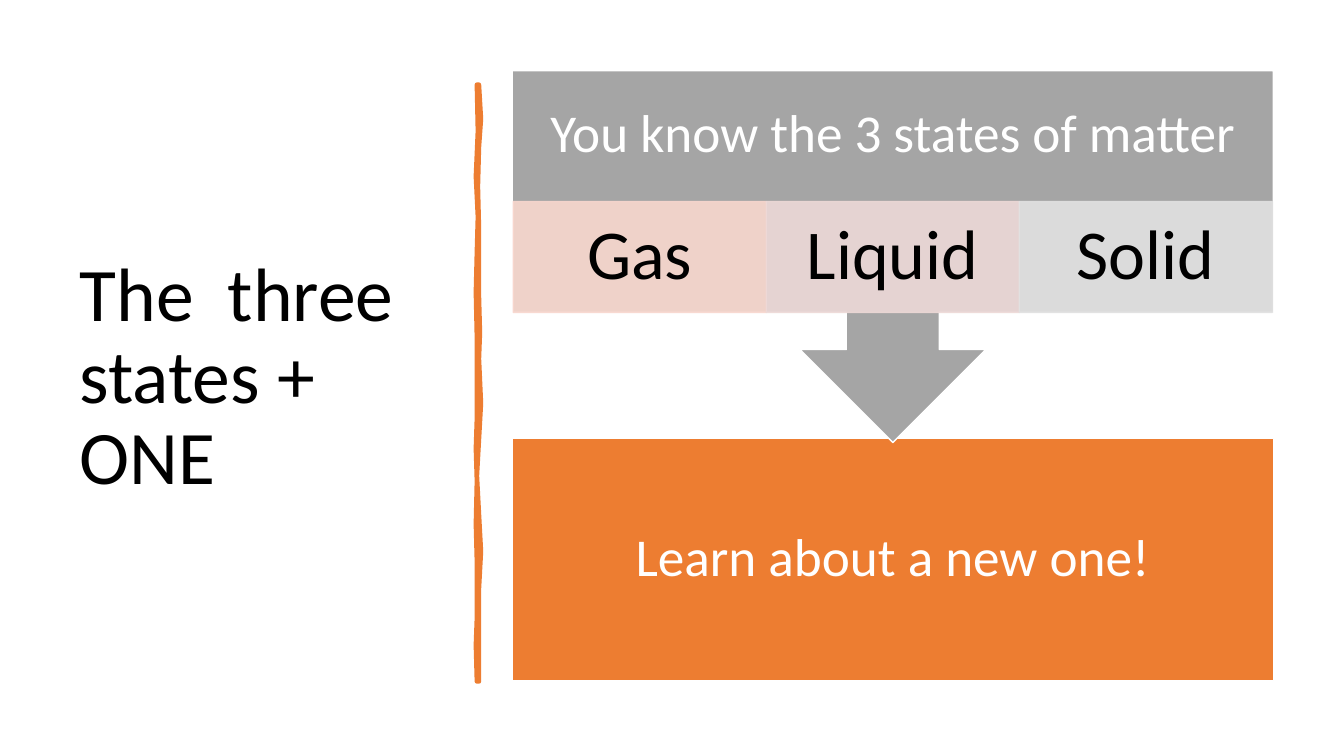
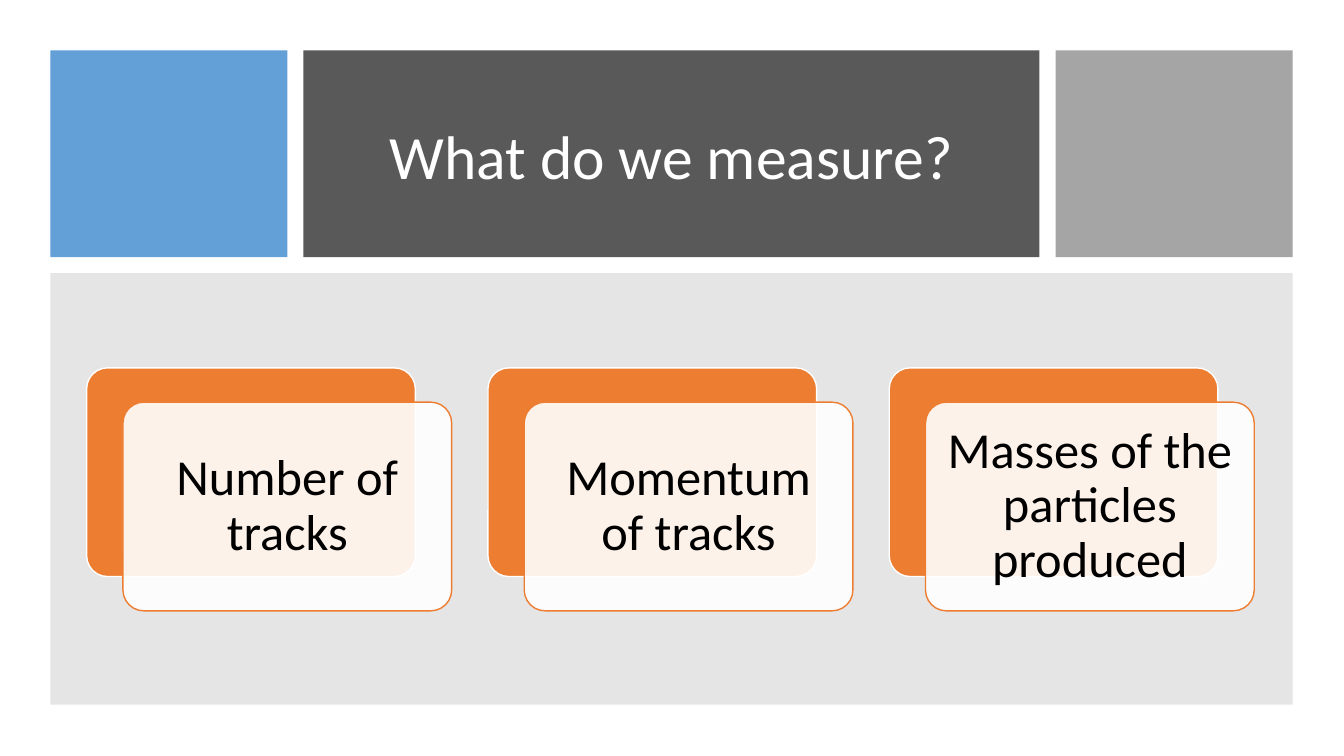
from lxml.etree import SubElement
from pptx import Presentation
from pptx.dml.color import RGBColor
from pptx.enum.shapes import MSO_SHAPE as Preset
from pptx.enum.text import MSO_ANCHOR as Anchor, MSO_AUTO_SIZE as AutoSize, PP_ALIGN as Align
from pptx.oxml.ns import qn
from pptx.util import Inches, Pt

ORANGE, GREY, CHARCOAL, BLUE = "ED7D31", "A5A5A5", "595959", "5B9BD5"
WHITE, BLACK, PANEL = "FFFFFF", "000000", "808080"


def rgb(value):
    """Turn a hex string into a colour."""
    return RGBColor.from_string(value)


def apply(target, values):
    """Set every attribute named in a dict of format values."""
    for name, value in values.items():
        setattr(target, name, value)


class Deck:
    """Hold the shared style, the presentation and the current slide."""

    font = "Calibri"
    line_spacing = 0.9

    def __init__(self):
        """Open a wide presentation."""
        self.deck = Presentation()
        apply(self.deck, {"slide_width": Inches(13.33), "slide_height": Inches(7.5)})
        self.page = None

    def new_page(self):
        """Start a slide that has only a title."""
        self.page = self.deck.slides.add_slide(self.deck.slide_layouts[5])

    def set_text(self, box, text, size, colour, align=Align.CENTER, insets=(0.1, 0.05)):
        """Put one styled paragraph in a shape."""
        frame = box.text_frame
        side, end = map(Inches, insets)
        apply(frame, {"word_wrap": True, "auto_size": AutoSize.NONE,
                      "vertical_anchor": Anchor.MIDDLE,
                      "margin_left": side, "margin_right": side,
                      "margin_top": end, "margin_bottom": end})
        para = frame.paragraphs[0]
        apply(para, {"alignment": align, "line_spacing": self.line_spacing})
        span = para.add_run()
        span.text = text
        apply(span.font, {"name": self.font, "size": Pt(size)})
        span.font.color.rgb = rgb(colour)

    def title(self, text, place, size, colour, align):
        """Move the title placeholder to its place, in front of the bands."""
        box = self.page.shapes.title
        apply(box, dict(zip(("left", "top", "width", "height"), map(Inches, place))))
        self.set_text(box, text, size, colour, align)
        self.page.shapes.element.append(box.element)

    def paint(self, shape, fill, line=None, width=1, alphas=()):
        """Fill and outline a shape, with opacities in percent for fill and line."""
        shape.shadow.inherit = False
        shape.fill.solid()
        shape.fill.fore_color.rgb = rgb(fill)
        if line:
            shape.line.color.rgb = rgb(line)
            shape.line.width = Pt(width)
        else:
            shape.line.fill.background()
        colours = shape.element.spPr.findall(".//" + qn("a:srgbClr"))
        for colour, percent in zip(colours, alphas):
            SubElement(colour, qn("a:alpha")).set("val", str(percent * 1000))

    def shape(self, preset, place, fill, line=None, alphas=(), radius=None):
        """Add a painted preset shape."""
        shape = self.page.shapes.add_shape(preset, *map(Inches, place))
        if radius:
            shape.adjustments[0] = radius
        self.paint(shape, fill, line, alphas=alphas)
        return shape

    def label(self, text, place, size, colour, insets):
        """Add a text box."""
        box = self.page.shapes.add_textbox(*map(Inches, place))
        self.set_text(box, text, size, colour, insets=insets)

    def stroke(self, points, colour, width):
        """Add a closed hand-drawn outline with round corners."""
        corners = [(Inches(x), Inches(y)) for x, y in points]
        builder = self.page.shapes.build_freeform(*corners[0])
        builder.add_line_segments(corners[1:], close=True)
        shape = builder.convert_to_shape()
        self.paint(shape, colour, colour, width)
        SubElement(shape.element.spPr.find(qn("a:ln")), qn("a:round"))


def states_page(deck):
    """Build the slide on the states of matter."""
    deck.new_page()
    deck.title("The  three  states + ONE", (0.69, 0.7, 3.74, 6.11), 54, BLACK, Align.LEFT)
    right_edge = [(4.75, 0.84), (4.77, 1.18), (4.75, 1.46), (4.74, 1.85), (4.75, 2.26),
                  (4.75, 2.94), (4.76, 3.3), (4.75, 3.56), (4.77, 4), (4.75, 4.36),
                  (4.73, 4.72), (4.75, 5.1), (4.77, 5.47), (4.75, 5.84), (4.75, 6.76)]
    left_edge = [(4.73, 6.76), (4.72, 6.4), (4.73, 6.13), (4.73, 5.57), (4.72, 5.2),
                 (4.73, 4.77), (4.72, 4.45), (4.73, 4.15), (4.73, 3.35), (4.72, 2.9),
                 (4.73, 2.5), (4.74, 2.15), (4.72, 1.75), (4.74, 1.3), (4.73, 0.84)]
    deck.stroke(right_edge + left_edge, ORANGE, 3.25)

    left, width, insets = 5.08, 7.55, (0.3, 0.3)
    answer = deck.shape(Preset.RECTANGLE, (left, 4.35, width, 2.4), ORANGE, WHITE)
    deck.set_text(answer, "Learn about a new one!", 38, WHITE, insets=insets)
    callout = deck.shape(Preset.UP_ARROW_CALLOUT, (left, 0.7, width, 3.69), GREY, WHITE)
    callout.rotation = 180
    deck.label("You know the 3 states of matter", (left, 0.7, width, 1.29), 38, WHITE, insets)
    states = (("Gas", "F8D7CE"), ("Liquid", "EDD9D7"), ("Solid", "E1E1E1"))
    for column, (state, tint) in enumerate(states):
        place = (5.09 + 2.51 * column, 2, 2.51, 1.1)
        cell = deck.shape(Preset.RECTANGLE, place, tint, tint, alphas=(90, 90))
        deck.set_text(cell, state, 50, BLACK, insets=(0.39, 0.07))


def measures_page(deck):
    """Build the slide on the measured quantities."""
    deck.new_page()
    bands = ((0.5, 2.35, BLUE, 95), (3.01, 7.3, CHARCOAL, 100), (10.47, 2.35, GREY, 100))
    for left, width, colour, alpha in bands:
        deck.shape(Preset.RECTANGLE, (left, 0.5, width, 2.05), colour, alphas=(alpha,))
    deck.title("What do we measure?", (3.33, 0.8, 6.66, 1.56), 44, WHITE, Align.CENTER)
    deck.shape(Preset.RECTANGLE, (0.5, 2.71, 12.32, 4.28), PANEL, alphas=(20,))

    measures = ("Number of tracks", "Momentum of tracks", "Masses of the particles produced")
    size, rounded = (3.26, 2.07), Preset.ROUNDED_RECTANGLE
    for column, measure in enumerate(measures):
        left = 0.86 + 3.98 * column
        deck.shape(rounded, (left, 3.65, *size), ORANGE, WHITE, radius=0.1)
        card = deck.shape(rounded, (left + 0.36, 3.99, *size), WHITE, ORANGE, (90,), 0.1)
        deck.set_text(card, measure, 36, BLACK, insets=(0.15, 0.15))


def main():
    """Build and save the presentation."""
    deck = Deck()
    states_page(deck)
    measures_page(deck)
    deck.deck.save("out.pptx")


if __name__ == "__main__":
    main()
